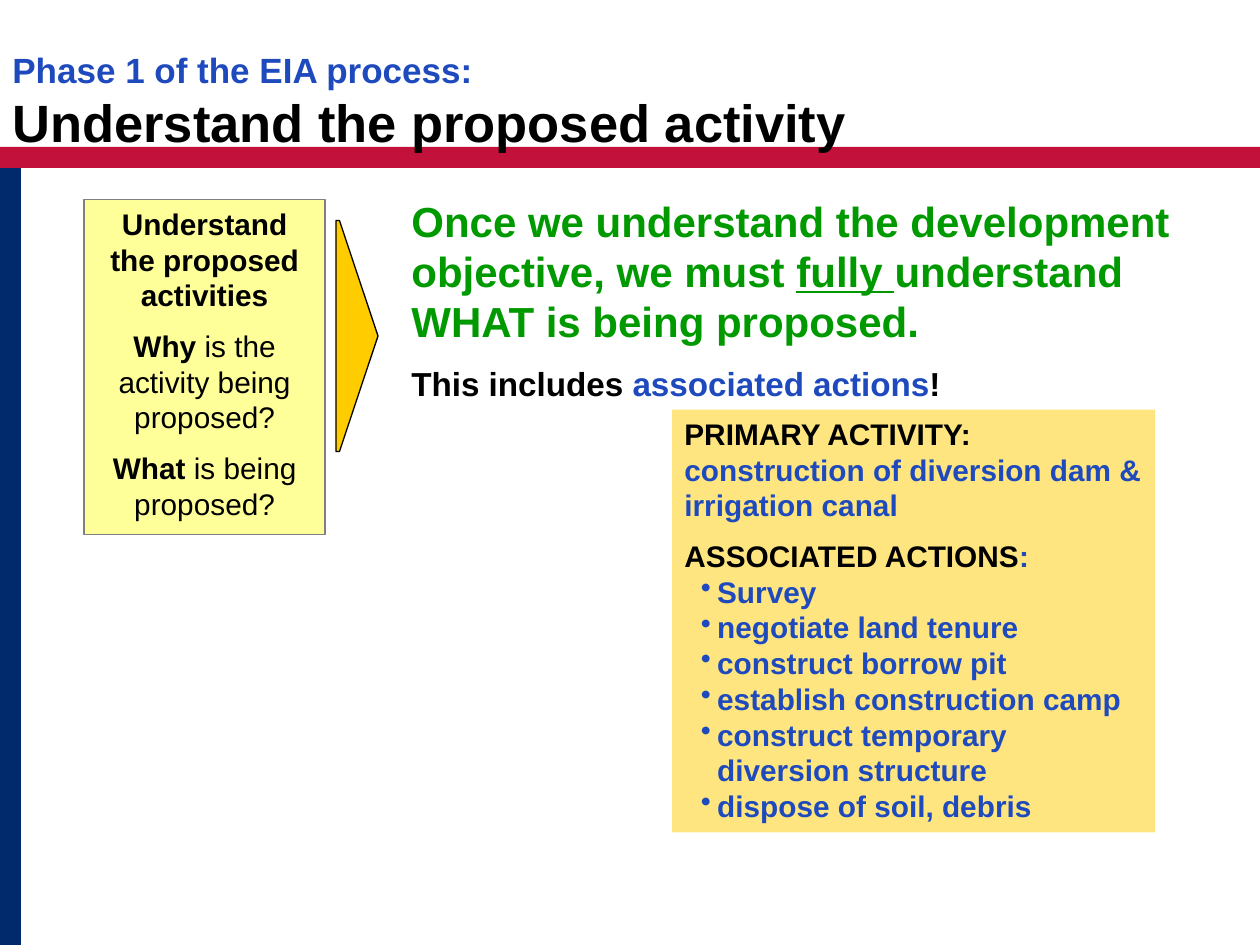
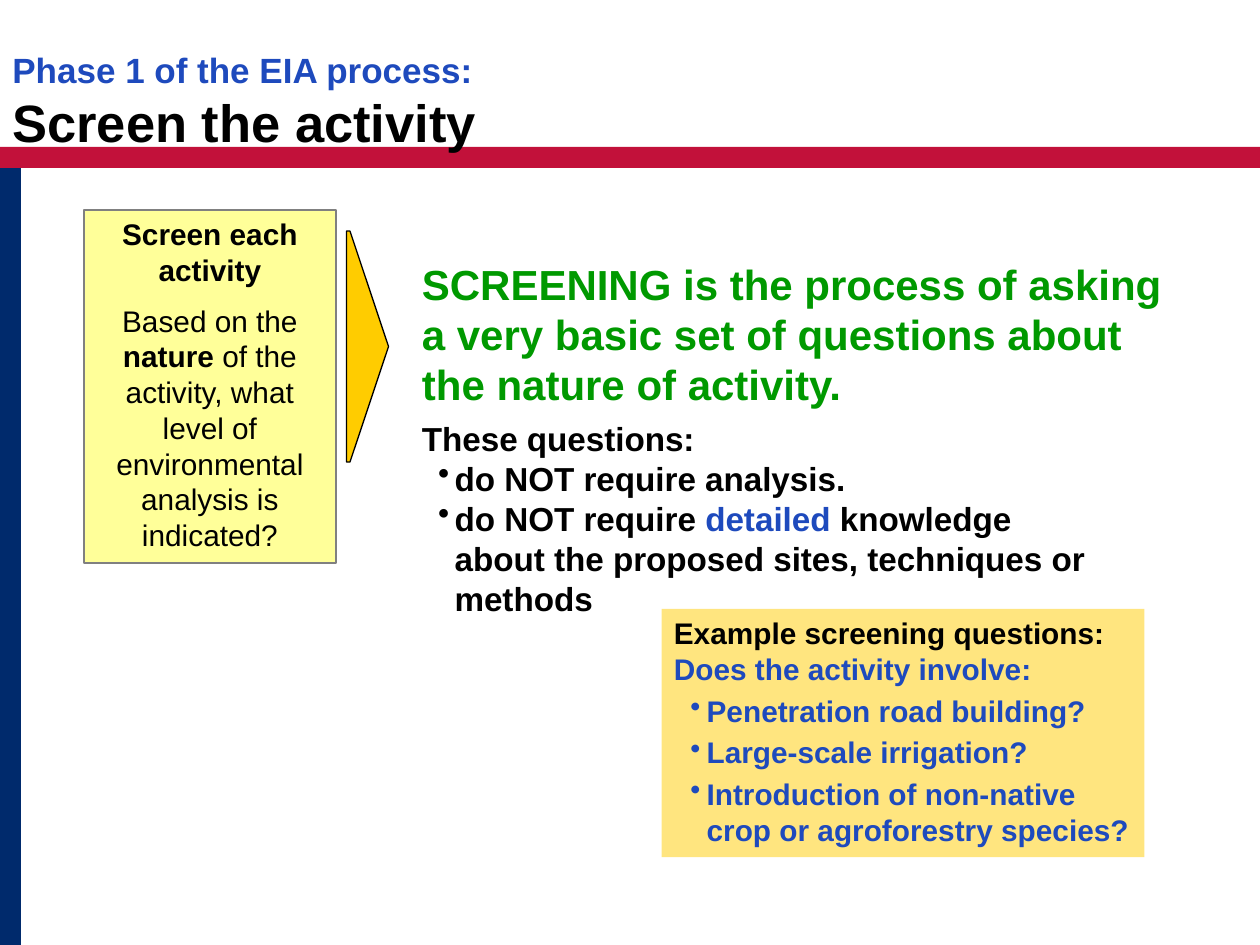
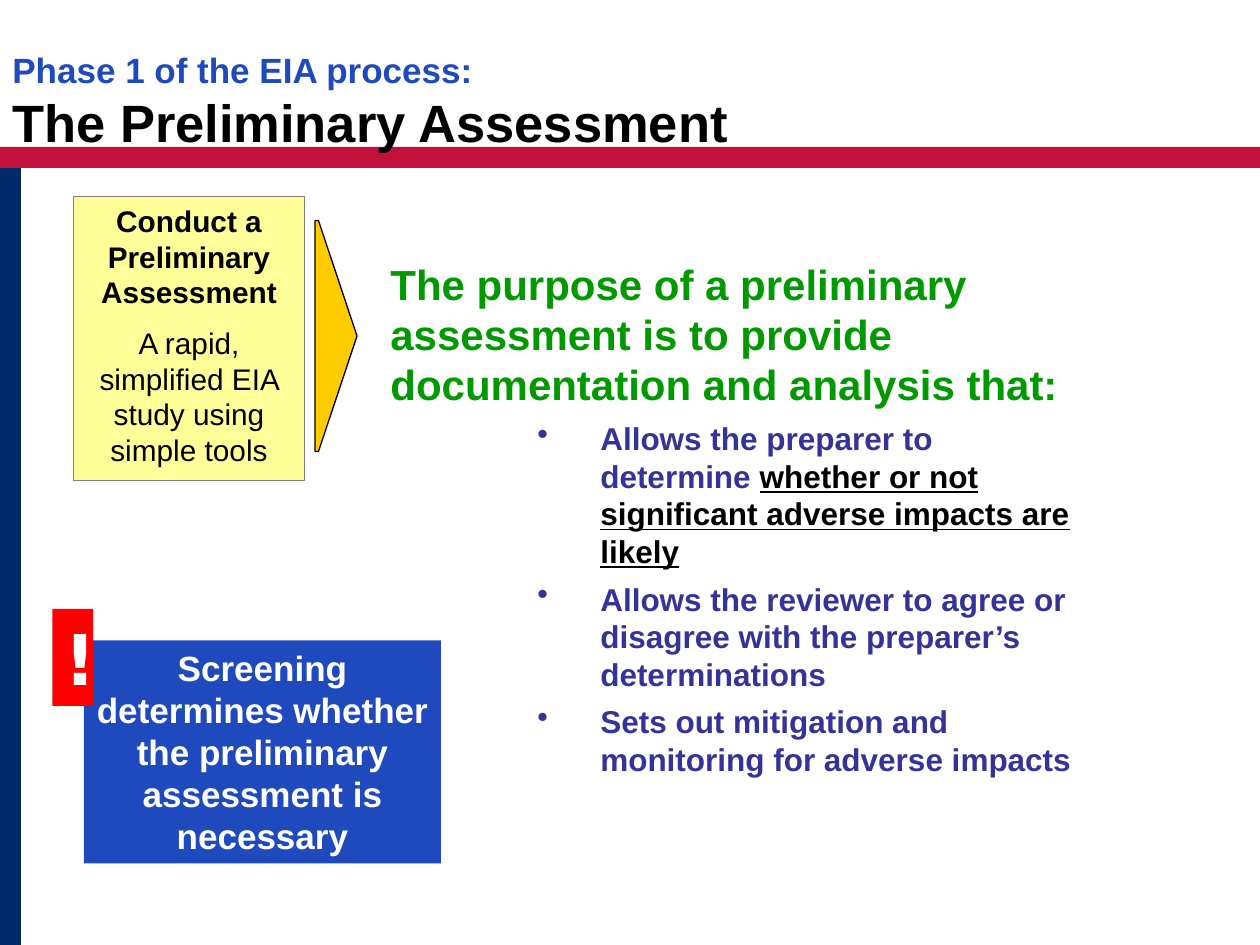
from lxml.etree import SubElement
from pptx import Presentation
from pptx.dml.color import RGBColor
from pptx.enum.shapes import MSO_SHAPE
from pptx.enum.text import MSO_ANCHOR, PP_ALIGN
from pptx.oxml.ns import qn
from pptx.util import Pt

COLORS = {
    "red_band": "C2113A", "navy_band": "002A6C", "blue": "1E4ABD", "black": "000000",
    "step": "FFFF99", "step_edge": "808080", "amber": "FFCC00", "green": "009900",
    "alert": "FF0000", "white": "FFFFFF", "indigo": "333399",
}
SUB_BULLET = (18.72, 9.36)
PURPOSE_BULLET = (36, 36)
BLUE = {"color": "blue"}
BLACK = {"color": "black"}
PLAIN = {"bold": False}
UNDERLINED = {"underline": True}


def add_block(slide, left, top, width, height, fill, edge=None, edge_width=1,
              outline=MSO_SHAPE.RECTANGLE, opacity=100):
    block = slide.shapes.add_shape(outline, Pt(left), Pt(top), Pt(width), Pt(height))
    block.shadow.inherit = False
    block.fill.solid()
    block.fill.fore_color.rgb = RGBColor.from_string(COLORS[fill])
    if opacity < 100:
        color = block.fill._xPr.find(qn("a:solidFill"))[0]
        SubElement(color, qn("a:alpha"), val=str(opacity * 1000))
    if edge:
        block.line.color.rgb = RGBColor.from_string(COLORS[edge])
        block.line.width = Pt(edge_width)
    else:
        block.line.fill.background()
    return block


def write(shape, paragraphs, size, color="black", align=PP_ALIGN.LEFT, before=0, after=0,
          bullet=None, bullets_from=0, font="Arial", wrap=True, anchor=MSO_ANCHOR.TOP):
    """Fill shape with paragraphs, each a list of (text, run overrides) pairs.

    bullet is (indent, hanging), used from paragraph number bullets_from on.
    before and after hold one spacing for all paragraphs or a list of spacings.
    """
    frame = shape.text_frame
    frame.word_wrap = wrap
    frame.vertical_anchor = anchor
    for number, runs in enumerate(paragraphs):
        paragraph = frame.paragraphs[0] if number == 0 else frame.add_paragraph()
        paragraph.alignment = align
        paragraph.space_before = Pt(before[number] if isinstance(before, list) else before)
        paragraph.space_after = Pt(after)
        paragraph.font.name = font
        paragraph.font.size = Pt(size)
        paragraph.font.bold = True
        paragraph.font.color.rgb = RGBColor.from_string(COLORS[color])
        if bullet and number >= bullets_from:
            properties = paragraph._p.get_or_add_pPr()
            properties.set("marL", str(Pt(bullet[0])))
            properties.set("indent", str(-Pt(bullet[1])))
            mark = properties.makeelement(qn("a:buChar"), {"char": "•"})
            properties.find(qn("a:defRPr")).addprevious(mark)
        for text, style in runs:
            run = paragraph.add_run()
            run.text = text.rstrip("\n")
            if text.endswith("\n"):
                paragraph.add_line_break()
            if "size" in style:
                run.font.size = Pt(style["size"])
            if "bold" in style:
                run.font.bold = style["bold"]
            if "underline" in style:
                run.font.underline = style["underline"]
            if "color" in style:
                run.font.color.rgb = RGBColor.from_string(COLORS[style["color"]])


phases = [
    {
        "title": "Understand the proposed activity",
        "step_at": (48, 114, 138, 191.5), "edge_width": 1,
        "step": [
            [("Understand the proposed activities", {})],
            [("Why", {}), (" is the activity being proposed?", PLAIN)],
            [("What", {}), (" is being proposed?", PLAIN)],
        ],
        "arrow_at": (192, 126),
        "message_at": (228, 108, 492, 93.6),
        "message": [
            ("Once we understand the development objective, we must ", {}),
            ("fully ", UNDERLINED),
            ("understand WHAT is being proposed.", {}),
        ],
    },
    {
        "title": "Screen the activity",
        "step_at": (48, 120, 144, 201.6), "edge_width": 1,
        "step": [
            [("Screen each activity", {})],
            [("Based on the ", PLAIN), ("nature", {}),
             (" of the activity, what level of environmental analysis is indicated?", PLAIN)],
        ],
        "arrow_at": (198, 132),
        "message_at": (234, 144, 450, 93.6),
        "message": [("SCREENING is the process of asking a very basic set of questions "
                     "about the nature of activity.", {})],
    },
    {
        "title": "The Preliminary Assessment",
        "step_at": (42, 112.3, 132, 162), "edge_width": 0.5,
        "step": [
            [("Conduct a Preliminary Assessment", {})],
            [("A rapid, simplified EIA study using simple tools", PLAIN)],
        ],
        "arrow_at": (180, 126),
        "message_at": (216, 144, 450, 93.6),
        "message": [("The purpose of a preliminary assessment is to provide "
                     "documentation and analysis that:", {})],
    },
]

deck = Presentation()
deck.slide_width, deck.slide_height = Pt(720), Pt(540)

# Bands, title, step box, arrow and message on every slide
slides = []
for phase in phases:
    slide = deck.slides.add_slide(deck.slide_layouts[6])
    slides.append(slide)
    add_block(slide, 0, 84, 720, 12, "red_band")
    add_block(slide, 0, 96, 12, 444, "navy_band")
    title = slide.shapes.add_textbox(Pt(0), Pt(24), Pt(612), Pt(48))
    write(title, [[("Phase 1 of the EIA process:\n", {"size": 20, "color": "blue"}),
                   (phase["title"], {})]], 30)
    step = add_block(slide, *phase["step_at"], "step", "step_edge", phase["edge_width"])
    write(step, phase["step"], 17, align=PP_ALIGN.CENTER, after=8.5)
    arrow = add_block(slide, *phase["arrow_at"], 24, 132, "amber", "black", 0.75,
                      outline=MSO_SHAPE.PENTAGON)
    arrow.adjustments[0] = 0.917
    message = slide.shapes.add_textbox(*map(Pt, phase["message_at"]))
    write(message, [phase["message"]], 24, "green")

understand, screen, assess = slides

# Understand: associated actions of an irrigation project
includes = understand.shapes.add_textbox(Pt(228), Pt(204), Pt(318), Pt(52.5))
write(includes, [[("This includes ", {}), ("associated actions", BLUE), ("!", {})]], 19,
      wrap=False)
actions = ["Survey", "negotiate land tenure", "construct borrow pit",
           "establish construction camp", "construct temporary diversion structure",
           "dispose of soil, debris"]
irrigation = add_block(understand, 384, 234, 276, 241.7, "amber", opacity=50)
write(irrigation,
      [[("PRIMARY ACTIVITY: ", BLACK), ("construction of diversion dam & irrigation canal", {})],
       [("ASSOCIATED ACTIONS", BLACK), (":", {})]] + [[(action, {})] for action in actions],
      17, "blue", before=[0, 8.5] + [0] * len(actions), bullet=SUB_BULLET, bullets_from=2)

# Screen: what the questions need, with examples
needs = screen.shapes.add_textbox(Pt(234), Pt(235.5), Pt(396), Pt(121))
write(needs,
      [[("These questions:", {})],
       [("do NOT require analysis.", {})],
       [("do NOT require ", {}), ("detailed", BLUE),
        (" knowledge about the proposed sites, techniques or methods", {})]],
      19, bullet=SUB_BULLET, bullets_from=1)
examples = ["Penetration road building?", "Large-scale irrigation?",
            "Introduction of non-native crop or agroforestry species?"]
screening = add_block(screen, 378, 348, 276, 141.8, "amber", opacity=50)
write(screening,
      [[("Example screening questions: ", BLACK), ("Does the activity involve:", {})]]
      + [[(example, {})] for example in examples],
      17, "blue", before=[0] + [3.4] * len(examples), bullet=SUB_BULLET, bullets_from=1)

# Assess: reminder with alert mark, and the purposes
reminder = add_block(assess, 48, 366, 204, 127.4, "blue")
write(reminder, [[("Screening determines whether the preliminary assessment is necessary", {})]],
      20, "white", PP_ALIGN.CENTER)
alert = add_block(assess, 30, 348, 23.3, 55.4, "alert")
write(alert, [[("!", {})]], 40, "white", font="DejaVu Sans")
purposes = assess.shapes.add_textbox(Pt(300), Pt(234), Pt(330), Pt(216))
write(purposes,
      [[("Allows the preparer to determine ", {}),
        ("whether or not significant adverse impacts are likely",
         {"color": "black", "underline": True})],
       [("Allows the reviewer to agree or disagree with the preparer’s determinations", {})],
       [("Sets out mitigation and monitoring for adverse impacts", {})]],
      18, "indigo", after=5.4, bullet=PURPOSE_BULLET, anchor=MSO_ANCHOR.MIDDLE)

deck.save("out.pptx")
